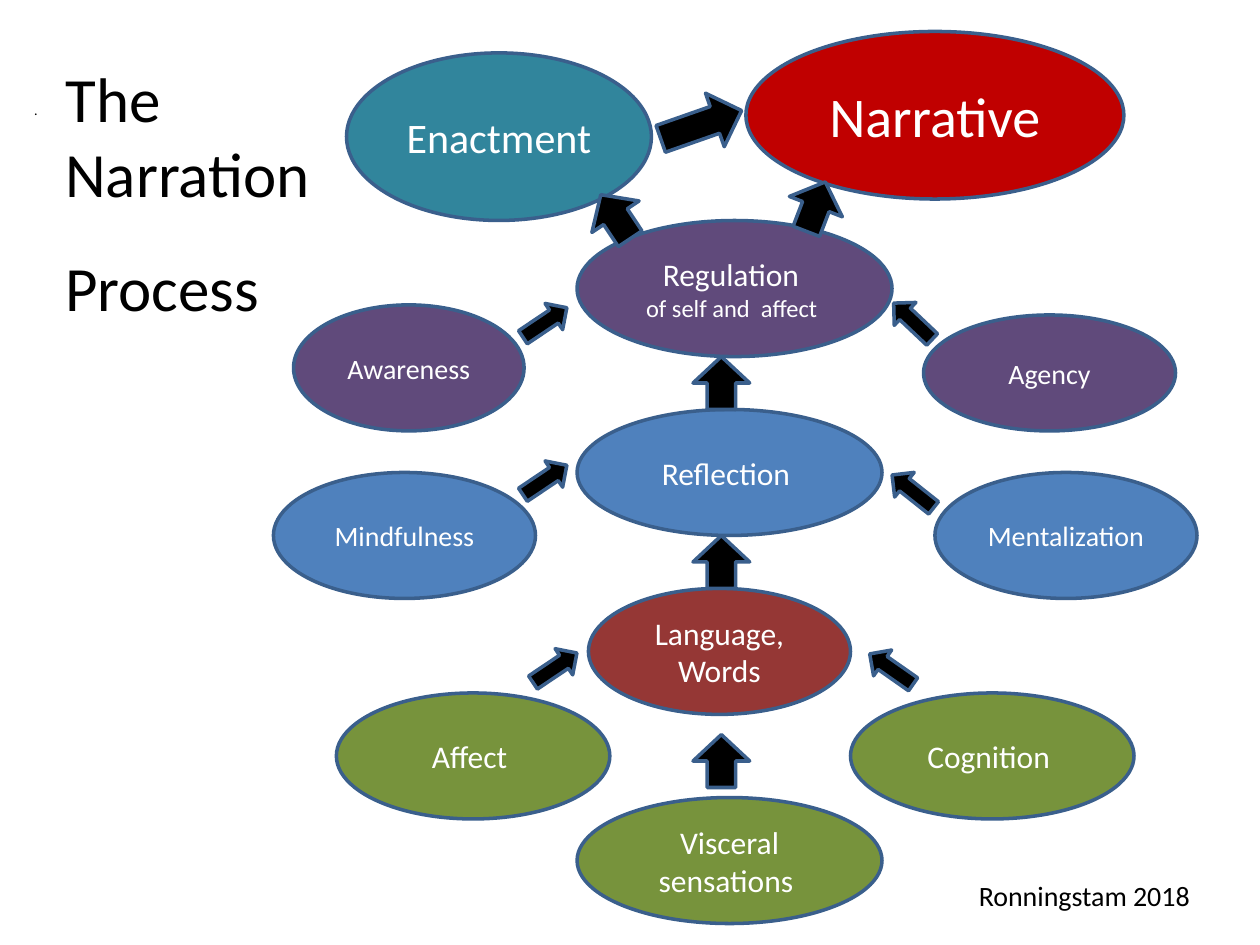
import pptx
import pptx.dml.color
import pptx.enum.shapes
import pptx.enum.text
import pptx.util

Inches = pptx.util.Inches
SHAPES = pptx.enum.shapes.MSO_SHAPE
ALIGN = pptx.enum.text.PP_ALIGN
MIDDLE = pptx.enum.text.MSO_ANCHOR.MIDDLE

BLACK, WHITE, OUTLINE = "000000", "FFFFFF", "3A5F8C"
GREEN, BLUE, PURPLE = "77933C", "4F81BD", "604A7B"
TEAL, RED, BRICK = "31859C", "C00000", "953735"

# Text, colour, text sizes by line, then left, top, width, height in the diagram
BUBBLES = [
    ("Visceral\vsensations ", GREEN, (18, 18), 2.41, 6.08, 2.42, 1),
    ("Cognition ", GREEN, (18,), 4.58, 5.25, 2.25, 1),
    ("Affect ", GREEN, (18,), 0.5, 5.25, 2.17, 1),
    ("Reflection ", BLUE, (18,), 2.41, 3, 2.42, 1),
    ("Awareness", PURPLE, (16,), 0.16, 2.17, 1.83, 1),
    ("Regulation \vof self and  affect ", PURPLE, (18, 14), 2.41, 1.5, 2.5, 1.08),
    ("Enactment", TEAL, (24,), 0.58, 0.17, 2.42, 1.33),
    ("Narrative", RED, (32,), 3.75, 0, 3, 1.33),
    ("Mindfulness", BLUE, (16,), 0, 3.5, 2.08, 1),
    ("Mentalization", BLUE, (16,), 5.25, 3.5, 2.08, 1),
    ("Language, Words", BRICK, (18,), 2.5, 4.42, 2.08, 1),
    ("Agency", PURPLE, (16,), 5.16, 2.25, 2, 0.92),
]

# Width and height, then left, top and rotation of each arrow of that size
ARROWS = {
    (0.45, 0.42): [(3.33, 5.58, 0), (3.33, 4, 0), (3.33, 2.58, 0),
                   (4.08, 1.18, 21), (2.49, 1.26, 326.3)],
    (0.45, 0.68): [(3.17, 0.4, 70.7)],
    (0.25, 0.42): [(2.03, 2.1, 56.1), (4.95, 2.09, 313.4),
                   (2.03, 3.35, 56.1), (4.95, 3.44, 308.4),
                   (2.11, 4.84, 56.1), (4.78, 4.85, 305)],
}


def color(value):
    return pptx.dml.color.RGBColor.from_string(value)


def format_run(span, size, ink):
    span.font.name = "Calibri"
    span.font.size = pptx.util.Pt(size)
    span.font.color.rgb = color(ink)


def add_outlined(page, kind, box, fill):
    shape = page.shapes.add_shape(kind, *map(Inches, box))
    shape.shadow.inherit = False
    shape.fill.solid()
    shape.fill.fore_color.rgb = color(fill)
    shape.line.color.rgb = color(OUTLINE)
    shape.line.width = pptx.util.Pt(2)
    return shape


def add_bubble(page, box, text, fill, sizes):
    bubble = add_outlined(page, SHAPES.OVAL, box, fill)
    frame = bubble.text_frame
    frame.word_wrap = True
    frame.vertical_anchor = MIDDLE
    para = frame.paragraphs[0]
    para.text = text
    para.alignment = ALIGN.CENTER
    for span, size in zip(para.runs, sizes):
        format_run(span, size, WHITE)


def add_diagram(page, left, top):
    for text, fill, sizes, x, y, width, height in BUBBLES:
        add_bubble(page, (left + x, top + y, width, height), text, fill, sizes)
    for (width, height), places in ARROWS.items():
        for x, y, rotation in places:
            box = (left + x, top + y, width, height)
            arrow = add_outlined(page, SHAPES.UP_ARROW, box, BLACK)
            arrow.rotation = rotation


def add_title(page, box, text):
    title = page.shapes.title
    title.left, title.top, title.width, title.height = map(Inches, box)
    title.text_frame.text = text
    title.text_frame.vertical_anchor = MIDDLE
    para = title.text_frame.paragraphs[0]
    para.alignment = ALIGN.LEFT
    format_run(para.runs[0], 8, BLACK)


def add_label(page, box, text, size):
    frame = page.shapes.add_textbox(*map(Inches, box)).text_frame
    frame.word_wrap = True
    frame.auto_size = pptx.enum.text.MSO_AUTO_SIZE.SHAPE_TO_FIT_TEXT
    para = frame.paragraphs[0]
    para.text = text
    for span in para.runs:
        format_run(span, size, BLACK)


def main():
    deck = pptx.Presentation()
    deck.slide_width, deck.slide_height = Inches(10), Inches(7.5)
    page = deck.slides.add_slide(deck.slide_layouts[5])
    add_title(page, (0.17, 0.25, 9.33, 1.25), ".")
    add_diagram(page, 2.17, 0.25)
    add_label(page, (0.42, 0.42, 2.25, 2.22), "The \vNarration \vProcess", 36)
    add_label(page, (7.67, 6.92, 2.17, 0.37), "Ronningstam 2018", 16)
    deck.save("out.pptx")


if __name__ == "__main__":
    main()
